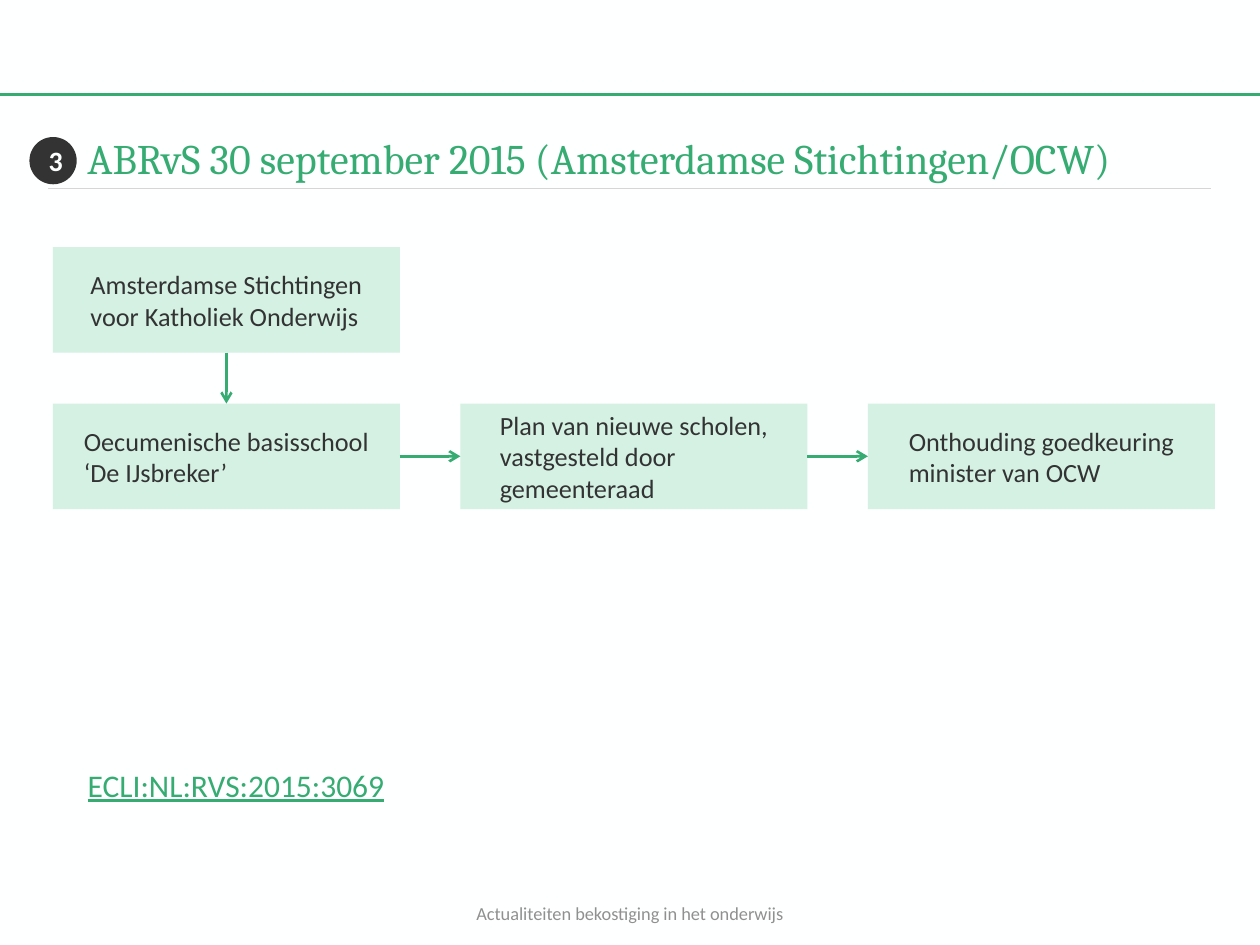
from lxml import etree
from pptx import Presentation
from pptx.dml.color import RGBColor
from pptx.enum.shapes import MSO_CONNECTOR, MSO_SHAPE
from pptx.enum.text import MSO_ANCHOR, PP_ALIGN
from pptx.oxml.ns import qn
from pptx.util import Pt

STRAIGHT = MSO_CONNECTOR.STRAIGHT
RECT, OVAL = MSO_SHAPE.RECTANGLE, MSO_SHAPE.OVAL
TOP, MIDDLE = MSO_ANCHOR.TOP, MSO_ANCHOR.MIDDLE
LEFT, CENTER = PP_ALIGN.LEFT, PP_ALIGN.CENTER

COLORS = {
    "paper": "FEFFFF",
    "green": "36AC73",
    "mint": "D4F1E3",
    "dark": "333333",
    "rule": "D7D5D6",
    "grey": "909090",
}


def rgb(name):
    return RGBColor.from_string(COLORS[name])


def write(tf, text, size=15, color="dark", font="Calibri", bold=False,
          underline=False, align=LEFT, anchor=TOP, inset_x=7.2, inset_y=3.6):
    tf.word_wrap = True
    tf.vertical_anchor = anchor
    tf.margin_left = tf.margin_right = Pt(inset_x)
    tf.margin_top = tf.margin_bottom = Pt(inset_y)
    p = tf.paragraphs[0]
    p.alignment = align
    r = p.add_run()
    r.text = text
    r.font.name = font
    r.font.size = Pt(size)
    r.font.bold = bold
    r.font.underline = underline
    r.font.color.rgb = rgb(color)


class Deck:
    def __init__(self, width, height):
        self.prs = Presentation()
        self.prs.slide_width, self.prs.slide_height = Pt(width), Pt(height)
        self.s = self.prs.slides.add_slide(self.prs.slide_layouts[6])
        fill = self.s.background.fill
        fill.solid()
        fill.fore_color.rgb = rgb("paper")

    def text(self, x, y, w, h, text, **fmt):
        sp = self.s.shapes.add_textbox(Pt(x), Pt(y), Pt(w), Pt(h))
        write(sp.text_frame, text, **fmt)

    def shape(self, kind, x, y, w, h, fill, text, **fmt):
        sp = self.s.shapes.add_shape(kind, Pt(x), Pt(y), Pt(w), Pt(h))
        sp.shadow.inherit = False
        sp.fill.solid()
        sp.fill.fore_color.rgb = rgb(fill)
        sp.line.fill.background()
        write(sp.text_frame, text, anchor=MIDDLE, **fmt)
        return sp

    def box(self, x, y, w, h, text):
        sp = self.shape(RECT, x, y, w, h, "mint", text, inset_x=9)
        sp.element.txBody.find(qn("a:bodyPr")).set("anchorCtr", "1")
        return sp

    def line(self, x1, y1, x2, y2, color="green", width=1.5):
        cxn = self.s.shapes.add_connector(STRAIGHT, Pt(x1), Pt(y1), Pt(x2), Pt(y2))
        cxn.line.color.rgb = rgb(color)
        cxn.line.width = Pt(width)
        etree.SubElement(cxn.element.spPr, qn("a:effectLst"))
        return cxn

    def arrow(self, start, start_site, end, end_site):
        cxn = self.line(0, 0, 0, 0)
        cxn.begin_connect(start, start_site)
        cxn.end_connect(end, end_site)
        etree.SubElement(cxn.line._get_or_add_ln(), qn("a:tailEnd"), type="arrow")


def main():
    deck = Deck(720, 540)
    deck.line(0, 54, 720, 54)
    deck.line(27.5, 107.5, 692, 107.5, color="rule", width=0.5)
    deck.text(50, 75.6, 664, 28.8,
              "ABRvS 30 september 2015 (Amsterdamse Stichtingen/OCW)",
              size=24, color="green", font="Cambria", inset_x=0, inset_y=0)
    deck.shape(OVAL, 16.8, 78.3, 27, 27, "dark", "3",
               size=16, color="paper", bold=True, align=CENTER)

    left, w, h, step = 30.25, 198.3, 60.3, 232.85
    top_row, flow_row = 141.2, 230.6
    school_board = deck.box(left, top_row, w, h,
                            "Amsterdamse Stichtingen voor Katholiek Onderwijs")
    steps = (
        "Oecumenische basisschool ‘De IJsbreker’",
        "Plan van nieuwe scholen, vastgesteld door gemeenteraad",
        "Onthouding goedkeuring minister van OCW",
    )
    flow = [deck.box(left + i * step, flow_row, w, h, text)
            for i, text in enumerate(steps)]
    bottom_site, right_site, top_site, left_site = 2, 3, 0, 1
    deck.arrow(school_board, bottom_site, flow[0], top_site)
    for a, b in zip(flow, flow[1:]):
        deck.arrow(a, right_site, b, left_site)

    deck.text(43, 434.2, 298, 28.8, "ECLI:NL:RVS:2015:3069",
              size=18, color="green", underline=True)
    deck.text(246, 515.5, 228, 13, "Actualiteiten bekostiging in het onderwijs",
              size=10.5, color="grey", align=CENTER, anchor=MIDDLE,
              inset_x=0, inset_y=0)
    deck.prs.save("out.pptx")


if __name__ == "__main__":
    main()
